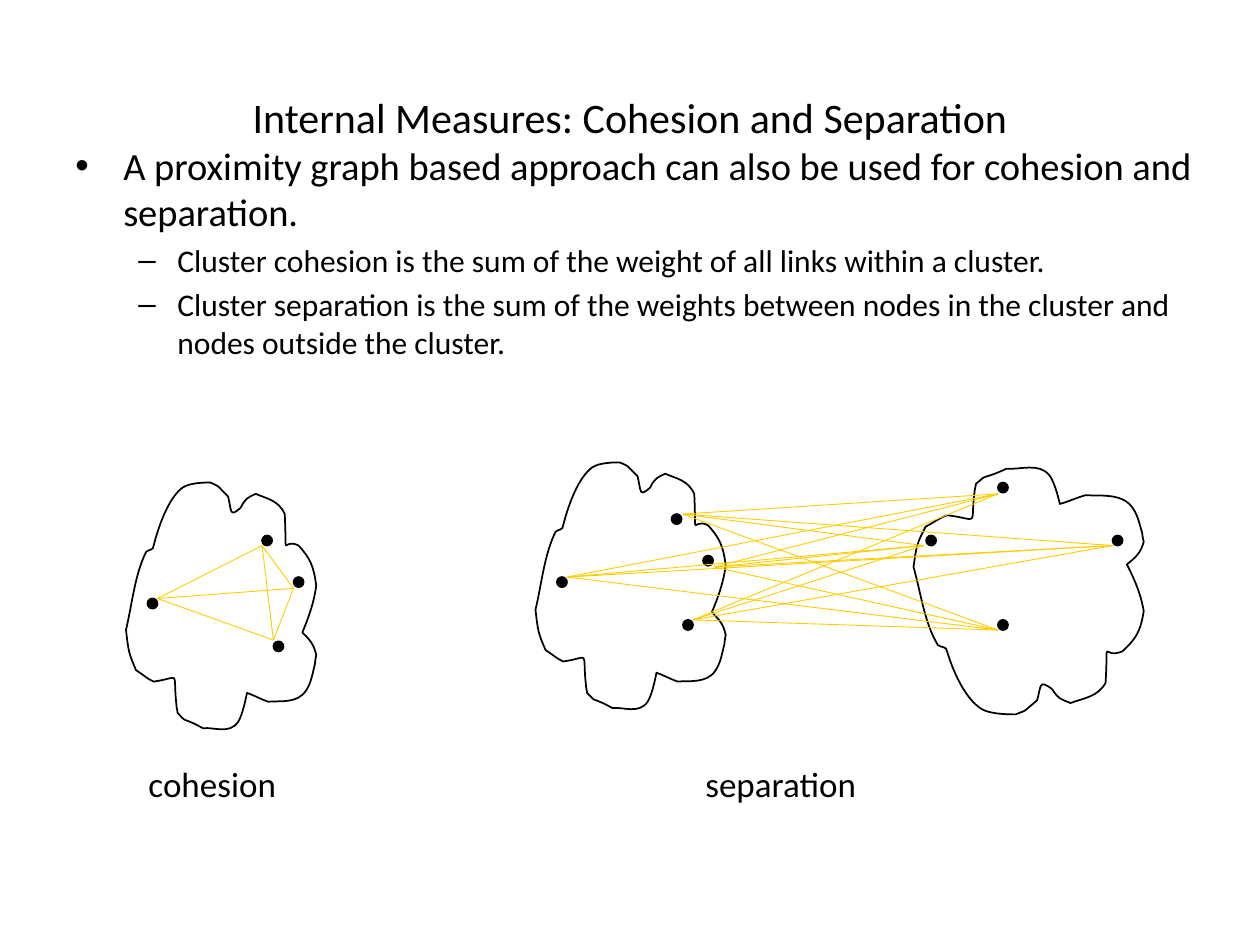
from dataclasses import dataclass
from itertools import combinations, product

from lxml.etree import SubElement
from pptx import Presentation
from pptx.dml.color import RGBColor
from pptx.enum.shapes import MSO_CONNECTOR, MSO_SHAPE
from pptx.enum.text import MSO_ANCHOR as ANCHOR, PP_ALIGN as ALIGN
from pptx.oxml.ns import qn
from pptx.util import Cm, Pt

Point = tuple[float, float]

FONT = "Calibri"
BLACK = "000000"
YELLOW = "FFCC00"
DOT = 0.08

OUTLINE_START = (16, 55)
OUTLINE_CURVES = [
    (7, 73, 5, 96, 0, 117), (2, 134, 2, 135, 8, 149),
    (13, 152, 17, 156, 22, 158), (44, 155, 37, 148, 40, 176),
    (40, 179, 41, 181, 41, 183), (48, 190, 44, 187, 51, 190),
    (54, 191, 61, 195, 61, 195), (70, 194, 82, 200, 89, 190),
    (93, 184, 96, 167, 96, 167), (102, 169, 107, 172, 113, 174),
    (121, 173, 136, 176, 143, 165), (147, 159, 148, 152, 150, 144),
    (150, 142, 151, 137, 151, 137), (149, 128, 146, 125, 140, 119),
    (145, 107, 149, 96, 151, 82), (149, 66, 146, 60, 137, 50),
    (123, 43, 128, 65, 126, 25), (121, 14, 112, 13, 103, 9),
    (97, 12, 95, 12, 91, 20), (82, 28, 84, 23, 81, 11),
    (70, 0, 75, 4, 67, 0), (63, 0, 51, 0, 45, 4),
    (34, 12, 26, 34, 22, 50), (22, 54, 18, 53, 16, 55),
]


@dataclass
class Cluster:
    origin: Point
    scale: Point
    dots: list[Point]
    link_ends: list[Point]


@dataclass
class Item:
    text: str
    size: float
    bullet: str = ""
    level: int = 0
    margin: float = 0
    indent: float = 0
    before: float = 0


def inch(value: float) -> Cm:
    return Cm(value * 2.54)


def rgb(value: str) -> RGBColor:
    return RGBColor.from_string(value)


def add_text(s, items: list[Item], left: float, top: float, width: float, height: float, *,
             color=BLACK, align=ALIGN.LEFT, anchor=ANCHOR.TOP, wrap=True):
    tf = s.shapes.add_textbox(*map(inch, (left, top, width, height))).text_frame
    tf.word_wrap = wrap
    tf.vertical_anchor = anchor
    for i, item in enumerate(items):
        p = tf.add_paragraph() if i else tf.paragraphs[0]
        p.alignment = align
        p.level = item.level
        p.space_before = Pt(item.before)
        r = p.add_run()
        r.text = item.text
        r.font.name = FONT
        r.font.size = Pt(item.size)
        r.font.color.rgb = rgb(color)
        if item.bullet:
            pPr = p._p.get_or_add_pPr()
            pPr.set("marL", str(inch(item.margin)))
            pPr.set("indent", str(inch(item.indent)))
            SubElement(pPr, qn("a:buFont"), typeface="Arial")
            SubElement(pPr, qn("a:buChar"), char=item.bullet)


def add_outline(s, cluster: Cluster):
    (left, top), (sx, sy) = cluster.origin, cluster.scale

    def place(x: float, y: float) -> tuple[int, int]:
        return inch(left + x * sx / 100), inch(top + y * sy / 100)

    points = [place(*c[i:i + 2]) for c in OUTLINE_CURVES for i in (0, 2, 4)]
    builder = s.shapes.build_freeform(*place(*OUTLINE_START))
    builder.add_line_segments(points, close=True)
    sp = builder.convert_to_shape()
    sp.shadow.inherit = False
    sp.fill.background()
    sp.line.color.rgb = rgb(BLACK)
    sp.line.width = Pt(1)
    segments = list(sp._element.iter(qn("a:lnTo")))
    for i in range(0, len(segments), 3):
        curve, *rest = segments[i:i + 3]
        curve.tag = qn("a:cubicBezTo")
        for segment in rest:
            curve.append(segment[0])
            segment.getparent().remove(segment)


def add_dot(s, dot: Point):
    sp = s.shapes.add_shape(MSO_SHAPE.OVAL, *map(inch, (*dot, DOT, DOT)))
    sp.shadow.inherit = False
    sp.fill.solid()
    sp.fill.fore_color.rgb = rgb(BLACK)
    sp.line.color.rgb = rgb(BLACK)
    sp.line.width = Pt(1)


def add_link(s, start: Point, end: Point):
    link = s.shapes.add_connector(MSO_CONNECTOR.STRAIGHT, *map(inch, (*start, *end)))
    link.line.color.rgb = rgb(YELLOW)
    link.line.width = Pt(0.5)
    SubElement(link._element.spPr, qn("a:effectLst"))


def add_cluster(s, cluster: Cluster):
    add_outline(s, cluster)
    for dot in cluster.dots:
        add_dot(s, dot)


def main():
    prs = Presentation()
    prs.slide_width, prs.slide_height = inch(10), inch(7.5)
    s = prs.slides.add_slide(prs.slide_layouts[6])

    add_text(s, [
        Item("A proximity graph based approach can also be used for cohesion and separation.",
             22, "•", 0, 0.38, -0.38),
        Item("Cluster cohesion is the sum of the weight of all links within a cluster.",
             18, "–", 1, 0.81, -0.31, 3.6),
        Item("Cluster separation is the sum of the weights between nodes in the cluster "
             "and nodes outside the cluster.", 18, "–", 1, 0.81, -0.31, 3.6),
    ], 0.5, 1.08, 9.25, 5.83)
    add_text(s, [Item("Internal Measures: Cohesion and Separation", 24)],
             0.5, 0.3, 9, 1.25, align=ALIGN.CENTER, anchor=ANCHOR.MIDDLE)

    near = Cluster((4.25, 3.67), (1, 1),
                   [(4.42, 4.58), (5.33, 4.08), (5.58, 4.41), (5.42, 4.92)],
                   [(4.5, 4.58), (5.42, 4.08), (5.67, 4.5), (5.5, 4.92)])
    far = Cluster((7.25, 5.67), (1.21, -1),
                  [(8.83, 4.25), (7.35, 4.25), (7.92, 4.92), (7.92, 3.83)],
                  [(8.83, 4.33), (7.33, 4.33), (7.92, 5), (7.92, 3.92)])
    single = Cluster((1, 3.83), (1, 1),
                     [(x - 3.25, y + 0.17) for x, y in near.dots],
                     [(1.25, 4.75), (2.08, 4.33), (2.33, 4.67), (2.17, 5.08)])

    add_cluster(s, near)
    add_cluster(s, far)
    for start, end in product(near.link_ends, far.link_ends):
        add_link(s, start, end)
    add_cluster(s, single)
    for start, end in combinations(single.link_ends, 2):
        add_link(s, start, end)

    add_text(s, [Item("cohesion", 20)], 1.08, 6, 1.31, 0.43, wrap=False)
    add_text(s, [Item("separation", 20)], 5.5, 6, 1.5, 0.43, wrap=False)
    prs.save("out.pptx")


if __name__ == "__main__":
    main()
